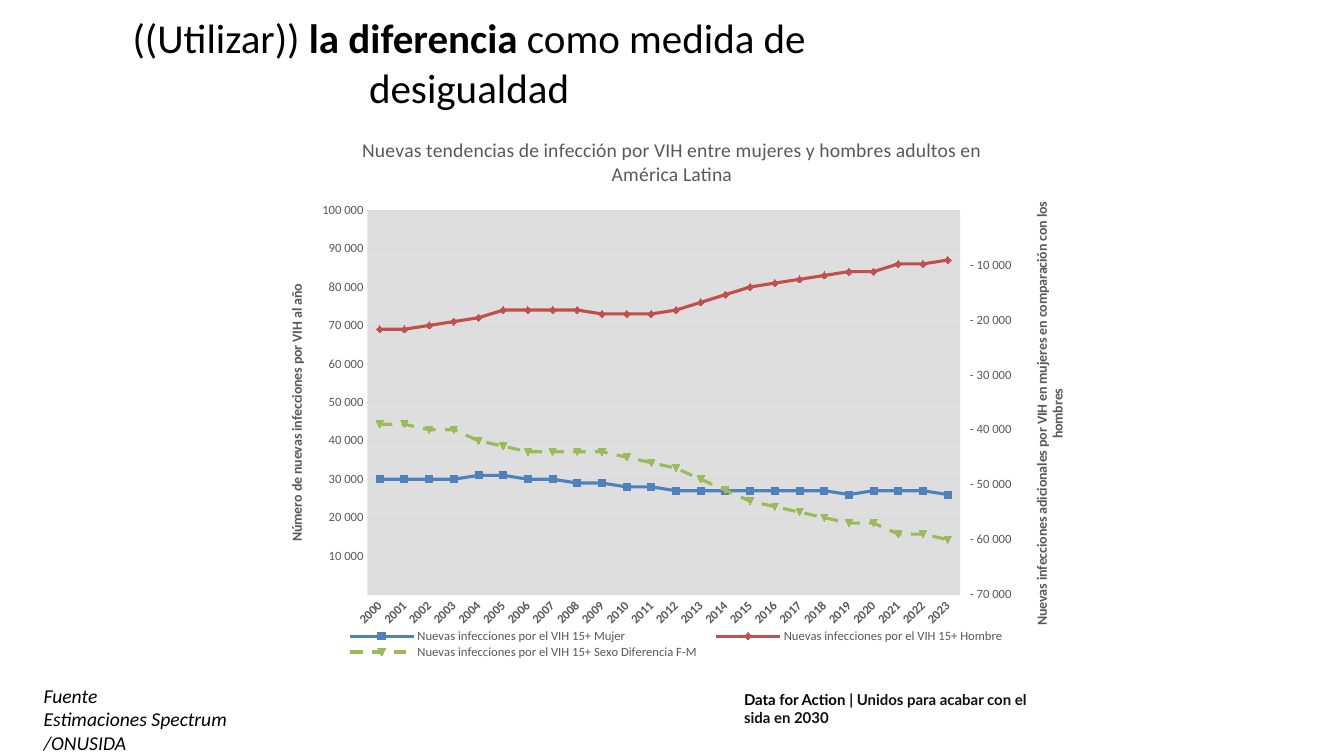
from copy import deepcopy
from lxml import etree
from pptx import Presentation
from pptx.chart.axis import ValueAxis
from pptx.chart.data import CategoryChartData
from pptx.dml.color import RGBColor
from pptx.enum.chart import XL_CHART_TYPE, XL_LEGEND_POSITION, XL_TICK_MARK
from pptx.enum.dml import MSO_LINE
from pptx.enum.text import MSO_ANCHOR, PP_ALIGN
from pptx.oxml.ns import qn
from pptx.util import Inches, Pt

LINE, BOTTOM = XL_CHART_TYPE.LINE, XL_LEGEND_POSITION.BOTTOM
NONE, OUT = XL_TICK_MARK.NONE, XL_TICK_MARK.OUTSIDE
DASH, MIDDLE, TOP = MSO_LINE.DASH, MSO_ANCHOR.MIDDLE, MSO_ANCHOR.TOP
LEFT, CENTER = PP_ALIGN.LEFT, PP_ALIGN.CENTER

THEME = {
    "title": {"size": Pt(29.3), "name": "Calibri", "color": "000000"},
    "source": {"size": Pt(14), "name": "Calibri", "color": "000000", "italic": True},
    "footer": {"size": Pt(10.7), "name": "Lato", "color": "111111", "bold": True},
    "chart": {"size": Pt(10), "name": "Calibri", "color": "000000"},
    "heading": {"size": Pt(14), "name": "Calibri", "color": "595959", "bold": False},
    "axis_title": {"size": Pt(10), "name": "Calibri", "color": "595959", "bold": True},
    "labels": {"size": Pt(9), "name": "Calibri", "color": "595959", "bold": False},
    "years": {"size": Pt(9), "name": "Calibri", "color": "595959", "bold": True},
    "grid": "D9D9D9",
    "plot": "BFBFBF",
    "series": ["4F81BD", "C0504D", "9BBB59"],
}


def style(font, look):
    for key, value in look.items():
        if key == "color":
            font.color.rgb = RGBColor.from_string(value)
        else:
            setattr(font, key, value)


def place(el, index, **box):
    for old in el.findall(qn("c:layout")):
        el.remove(old)
    layout = etree.Element(qn("c:layout"))
    manual = etree.SubElement(layout, qn("c:manualLayout"))
    if "w" in box and index == 0:
        etree.SubElement(manual, qn("c:layoutTarget")).set("val", "inner")
    for key in ("xMode", "yMode"):
        etree.SubElement(manual, qn("c:" + key)).set("val", "edge")
    for key, value in box.items():
        etree.SubElement(manual, qn("c:" + key)).set("val", str(value))
    el.insert(index, layout)


prs = Presentation()
prs.slide_width, prs.slide_height = Inches(13.33), Inches(7.5)
COL, ROW = prs.slide_width / 160, prs.slide_height / 90
s = prs.slides.add_slide(prs.slide_layouts[6])

texts = [
    ("footer", (87.4, 81.6, 36.7, 3.4), TOP, LEFT,
     [("Data for Action", {"color": "000000"}),
      (" | Unidos para acabar con el sida en 2030", {})]),
    ("title", (4, 2.4, 103.7, 10), MIDDLE, CENTER,
     [("((Utilizar)) ", {}), ("la diferencia ", {"bold": True}),
      ("como medida de desigualdad", {"bold": False})]),
    ("source", (4, 80.8, 33, 6.8), TOP, LEFT,
     [("Fuente", {}), ("\n", {}), ("Estimaciones Spectrum /ONUSIDA", {})]),
]
for look, (x, y, w, h), anchor, align, runs in texts:
    sp = s.shapes.add_textbox(int(x * COL), int(y * ROW), int(w * COL), int(h * ROW))
    tf = sp.text_frame
    tf.word_wrap, tf.vertical_anchor = True, anchor
    p = tf.paragraphs[0]
    p.alignment = align
    for text, extra in runs:
        if text == "\n":
            p.add_line_break()
            continue
        r = p.add_run()
        r.text = text
        style(r.font, {**THEME[look], **extra})

thousands = {
    "Mujer": [30, 30, 30, 30, 31, 31, 30, 30, 29, 29, 28, 28,
              27, 27, 27, 27, 27, 27, 27, 26, 27, 27, 27, 26],
    "Hombre": [69, 69, 70, 71, 72, 74, 74, 74, 74, 73, 73, 73,
               74, 76, 78, 80, 81, 82, 83, 84, 84, 86, 86, 87],
    "Sexo Diferencia F-M": [-39, -39, -40, -40, -42, -43, -44, -44, -44, -44, -45, -46,
                            -47, -49, -51, -53, -54, -55, -56, -57, -57, -59, -59, -60],
}
data = CategoryChartData(number_format="###\\ ###\\ ###")
data.categories = [str(year) for year in range(2000, 2024)]
for name, values in thousands.items():
    data.add_series("Nuevas infecciones por el VIH 15+ " + name, [v * 1000 for v in values])
chart = s.shapes.add_chart(LINE, int(31 * COL), int(13.9 * ROW),
                           int(98 * COL), int(65.4 * ROW), data).chart
style(chart.font, THEME["chart"])
chart.plots[0].vary_by_categories = False
for ser, color in zip(chart.series, THEME["series"]):
    ser.smooth = False
    ser.marker.style = None
    ser.format.line.color.rgb = RGBColor.from_string(color)
    ser.format.line.width = Pt(2.25)
ser.format.line.dash_style = DASH

chart.has_title = True
tf = chart.chart_title.text_frame
tf.text = "Nuevas tendencias de infección por VIH entre mujeres y hombres adultos en América Latina"
style(tf.paragraphs[0].runs[0].font, THEME["heading"])

chart.has_legend = True
chart.legend.position, chart.legend.include_in_layout = BOTTOM, False
style(chart.legend.font, THEME["labels"])
place(chart.legend._element, 1, x=0.09, y=0.93, w=0.83, h=0.06)

years, left = chart.category_axis, chart.value_axis
years.major_tick_mark = years.minor_tick_mark = NONE
style(years.tick_labels.font, THEME["years"])
years._element.find(qn("c:txPr")).find(qn("a:bodyPr")).set("rot", "-2700000")
for line in (years.format.line, left.major_gridlines.format.line):
    line.color.rgb = RGBColor.from_string(THEME["grid"])
    line.width = Pt(0.75)
left.format.line.fill.background()
left.tick_labels.number_format = "###\\ ###\\ ###"
left.tick_labels.number_format_is_linked = False

area = left._element.getparent()
lines = area.find(qn("c:lineChart"))
right_lines = deepcopy(lines)
lines.remove(lines.findall(qn("c:ser"))[2])
for ser in right_lines.findall(qn("c:ser"))[:2]:
    right_lines.remove(ser)
lines.addnext(right_lines)
right_el, hidden_el = deepcopy(left._element), deepcopy(years._element)
left._element.addnext(right_el)
right_el.addnext(hidden_el)
for ax, own, other in ((right_el, "5002", "5001"), (hidden_el, "5001", "5002")):
    ax.find(qn("c:axId")).set("val", own)
    ax.find(qn("c:crossAx")).set("val", other)
for ax_id, value in zip(right_lines.findall(qn("c:axId")), ("5001", "5002")):
    ax_id.set("val", value)
hidden_el.find(qn("c:delete")).set("val", "1")
right_el.find(qn("c:axPos")).set("val", "r")
right_el.find(qn("c:crosses")).set("val", "max")
right = ValueAxis(right_el)
right.has_major_gridlines = False

axes = [
    (left, 0, 100000, NONE, "Número de nuevas infecciones por VIH al año", 0.03, 0.3),
    (right, -70000, 0, OUT, "Nuevas infecciones adicionales por VIH en mujeres "
     "en comparación con los hombres", 0.935, 0.15),
]
for axis, low, high, tick, title, x, y in axes:
    for key, value in {"minimum_scale": low, "maximum_scale": high, "major_unit": 10000,
                       "major_tick_mark": tick, "minor_tick_mark": NONE}.items():
        setattr(axis, key, value)
    style(axis.tick_labels.font, THEME["labels"])
    tf = axis.axis_title.text_frame
    tf.text = title
    style(tf.paragraphs[0].runs[0].font, THEME["axis_title"])
    tf._txBody.find(qn("a:bodyPr")).set("rot", "-5400000")
    place(axis.axis_title._element, 1, x=x, y=y)

place(area, 0, x=0.13, y=0.17, w=0.72, h=0.7)
sp_pr = etree.SubElement(area, qn("c:spPr"))
fill = etree.SubElement(sp_pr, qn("a:solidFill"))
color = etree.SubElement(fill, qn("a:srgbClr"), val=THEME["plot"])
etree.SubElement(color, qn("a:alpha"), val="50000")

prs.save("out.pptx")
